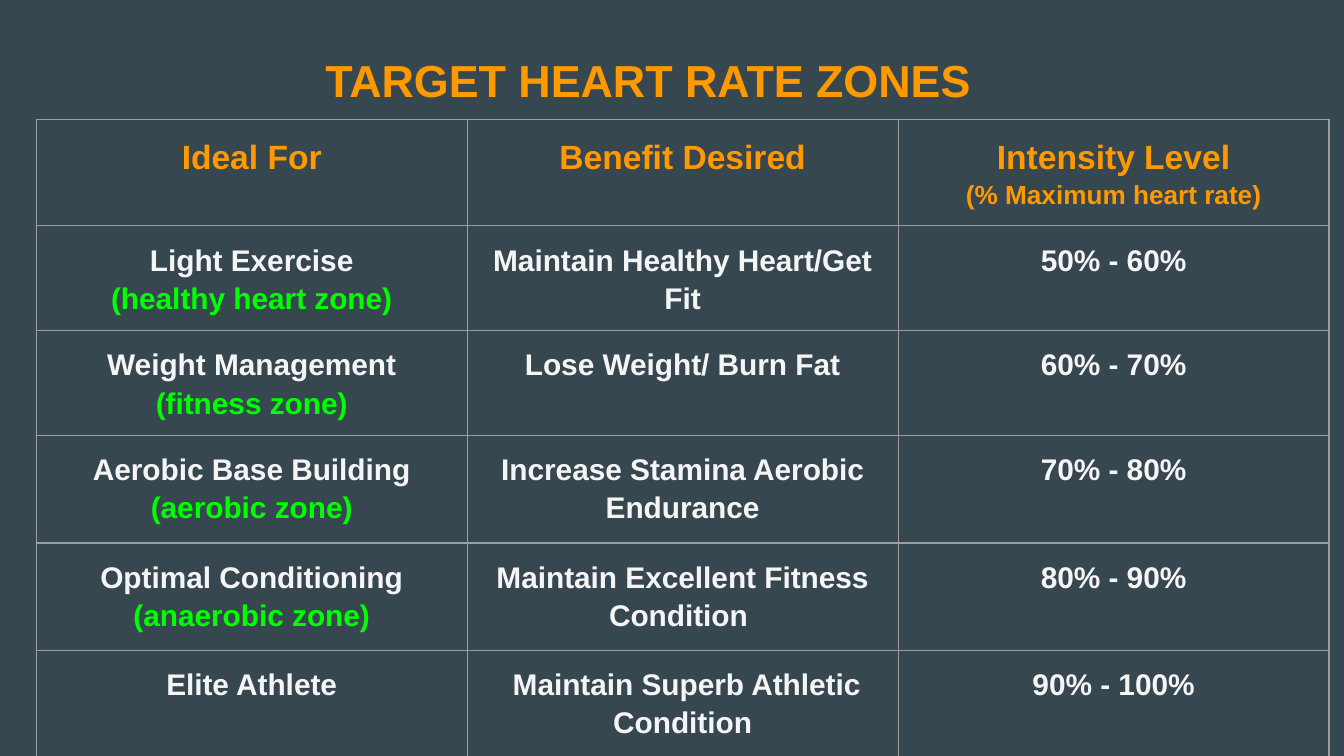
import dataclasses

import lxml.etree
import pptx
import pptx.dml.color
import pptx.enum.text
import pptx.oxml.ns
import pptx.util

Inches = pptx.util.Inches
Pt = pptx.util.Pt
Color = pptx.dml.color.RGBColor.from_string


@dataclasses.dataclass(frozen=True)
class Theme:
    font: str = "Arial"
    background: str = "37474F"
    accent: str = "FF9900"
    text: str = "F5F5F5"
    zone: str = "00FF00"
    grid: str = "9E9E9E"
    title_size: int = 24
    header_size: int = 18
    note_size: int = 14
    body_size: int = 16


THEME = Theme()
HEADER = (THEME.header_size, THEME.accent)
NOTE = (THEME.note_size, THEME.accent)
BODY = (THEME.body_size, THEME.text)
ZONE = (THEME.body_size, THEME.zone)
MARGINS = dict.fromkeys(
    ("margin_left", "margin_right", "margin_top", "margin_bottom"), Inches(0.1))

HEADINGS = [
    ["Ideal For"],
    ["Benefit Desired"],
    ["Intensity Level", "(% Maximum heart rate)"],
]
ZONES = [
    [["Light Exercise", "(healthy heart zone)"],
     ["Maintain Healthy Heart/Get Fit"], ["50% - 60%"]],
    [["Weight Management", "(fitness zone)"],
     ["Lose Weight/ Burn Fat"], ["60% - 70%"]],
    [["Aerobic Base Building", "(aerobic zone)"],
     ["Increase Stamina Aerobic Endurance"], ["70% - 80%"]],
    [["Optimal Conditioning", "(anaerobic zone)"],
     ["Maintain Excellent Fitness Condition "], ["80% - 90%"]],
    [["Elite Athlete"],
     [" Maintain Superb Athletic Condition"], ["90% - 100%"]],
]
ROW_HEIGHTS = [0.79, 0.78, 0.78, 0.8, 0.8, 0.8]


def apply(target, values):
    for name, value in values.items():
        setattr(target, name, value)


def write_line(para, text, style, align, spacing):
    size, color = style
    apply(para, {"alignment": align, "line_spacing": spacing})
    span = para.add_run()
    span.text = text
    apply(span.font, {"name": THEME.font, "size": Pt(size), "bold": True})
    span.font.color.rgb = Color(color)


def add_title(page, text):
    box = page.shapes.title
    apply(box, {"left": Inches(2.32), "top": Inches(0.29),
                "width": Inches(5.4), "height": Inches(0.53)})
    frame = box.text_frame
    apply(frame, MARGINS)
    apply(frame, {"word_wrap": True,
                  "auto_size": pptx.enum.text.MSO_AUTO_SIZE.NONE,
                  "vertical_anchor": pptx.enum.text.MSO_ANCHOR.TOP})
    write_line(frame.paragraphs[0], text, (THEME.title_size, THEME.accent),
               pptx.enum.text.PP_ALIGN.LEFT, 1.0)
    frame.paragraphs[0].space_before = Pt(0)


def draw_borders(cell):
    properties = cell._tc.get_or_add_tcPr()
    qn = pptx.oxml.ns.qn
    for side in ("a:lnL", "a:lnR", "a:lnT", "a:lnB"):
        line = lxml.etree.SubElement(properties, qn(side), w=str(Pt(0.75)))
        fill = lxml.etree.SubElement(line, qn("a:solidFill"))
        lxml.etree.SubElement(fill, qn("a:srgbClr"), val=THEME.grid)


def fill_cell(cell, lines, styles):
    apply(cell, MARGINS)
    draw_borders(cell)
    cell.fill.background()
    frame = cell.text_frame
    for index, (text, style) in enumerate(zip(lines, styles)):
        para = frame.add_paragraph() if index else frame.paragraphs[0]
        write_line(para, text, style, pptx.enum.text.PP_ALIGN.CENTER, 1.15)


def add_zone_table(page):
    rows = [HEADINGS] + ZONES
    holder = page.shapes.add_table(
        len(rows), len(HEADINGS), Inches(0.27), Inches(0.89),
        Inches(9.62), Inches(4.88))
    table = holder.table
    apply(table, {"first_row": False, "horz_banding": False})
    for row, height in zip(table.rows, ROW_HEIGHTS):
        row.height = Inches(height)
    holder.height = Inches(4.88)
    for row_index, row in enumerate(rows):
        styles = (BODY, ZONE) if row_index else (HEADER, NOTE)
        for column_index, lines in enumerate(row):
            fill_cell(table.cell(row_index, column_index), lines, styles)


def main():
    # Widescreen deck, 16 by 9
    deck = pptx.Presentation()
    width = Inches(10)
    apply(deck, {"slide_width": width, "slide_height": width * 9 // 16})

    # Page with a title-only layout and dark background
    page = deck.slides.add_slide(deck.slide_layouts[5])
    page.background.fill.solid()
    page.background.fill.fore_color.rgb = Color(THEME.background)

    # Heart rate zones, with the heading above
    add_zone_table(page)
    add_title(page, "TARGET HEART RATE ZONES")

    deck.save("out.pptx")


if __name__ == "__main__":
    main()
